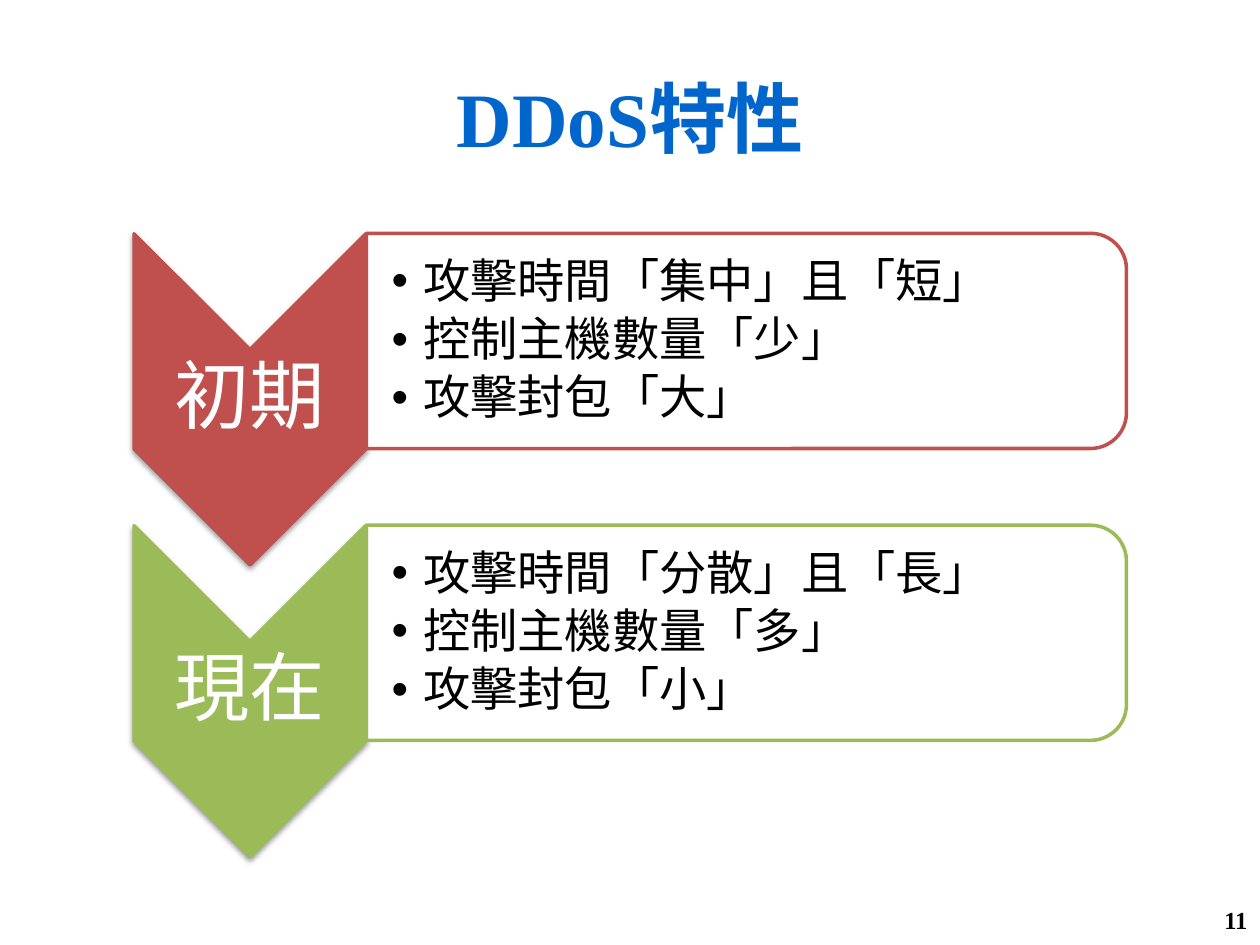
"""Builds the DDoS characteristics slide: two phases, each a chevron beside a list panel."""
from lxml import etree
from pptx import Presentation
from pptx.dml.color import RGBColor
from pptx.enum import shapes, text
from pptx.oxml import ns
from pptx.util import Pt

FONT = "Times New Roman"
BLUE = RGBColor(0x00, 0x66, 0xCC)
RED = RGBColor(0xC0, 0x50, 0x4D)
GREEN = RGBColor(0x9B, 0xBB, 0x59)
WHITE = RGBColor(0xFF, 0xFF, 0xFF)
BLACK = RGBColor(0x00, 0x00, 0x00)

PHASES = [
    ("初期", RED, ["攻擊時間「集中」且「短」", "控制主機數量「少」", "攻擊封包「大」"]),
    ("現在", GREEN, ["攻擊時間「分散」且「長」", "控制主機數量「多」", "攻擊封包「小」"]),
]
PHASE_STEP = 166.8


def add_node(parent, tag, **attributes):
    return etree.SubElement(parent, ns.qn(tag), attributes)


def format_text(box, size, color, align, margins=None, bold=False):
    frame = box.text_frame
    frame.word_wrap = True
    frame.auto_size = text.MSO_AUTO_SIZE.NONE
    frame.vertical_anchor = text.MSO_ANCHOR.MIDDLE
    if margins:
        frame.margin_left, frame.margin_top, frame.margin_right, frame.margin_bottom = map(Pt, margins)
    for para in frame.paragraphs:
        para.alignment = align
        for span in para.runs:
            span.font.name = FONT
            span.font.size = Pt(size)
            span.font.bold = bold
            span.font.color.rgb = color


deck = Presentation()
deck.slide_width, deck.slide_height = Pt(720), Pt(540)
page = deck.slides.add_slide(deck.slide_layouts[3])
title, *lists = list(page.placeholders)[:3]

title.left, title.top, title.width, title.height = Pt(36), Pt(21.6), Pt(648), Pt(90)
title.text_frame.text = "DDoS特性"
format_text(title, 44, BLUE, text.PP_ALIGN.CENTER, bold=True)

for index, (phase, color, points) in enumerate(PHASES):
    offset = index * PHASE_STEP

    chevron = page.shapes.add_shape(
        shapes.MSO_SHAPE.CHEVRON, Pt(48.2), Pt(162 + offset), Pt(189.2), Pt(132.4))
    chevron.rotation = 90
    chevron.fill.solid()
    chevron.fill.fore_color.rgb = color
    chevron.line.color.rgb = color
    chevron.line.width = Pt(2)
    chevron.shadow.inherit = False
    effects = chevron._element.spPr.find(ns.qn("a:effectLst"))
    shadow = add_node(effects, "a:outerShdw", blurRad=str(Pt(3.1)), dist=str(Pt(1.6)),
                      dir="5400000", rotWithShape="0")
    add_node(add_node(shadow, "a:srgbClr", val="000000"), "a:alpha", val="38000")

    label = page.shapes.add_textbox(Pt(76.4), Pt(199.6 + offset), Pt(132.4), Pt(56.8))
    label.text_frame.text = phase
    format_text(label, 43, WHITE, text.PP_ALIGN.CENTER, (2, 2, 2, 2))

    panel = page.shapes.add_shape(
        shapes.MSO_SHAPE.ROUND_2_SAME_RECTANGLE, Pt(365), Pt(-22.4 + offset), Pt(123), Pt(434.4))
    panel.rotation = 90
    panel.shadow.inherit = False
    panel.fill.solid()
    panel.fill.fore_color.rgb = WHITE
    tint = panel._element.spPr.find(ns.qn("a:solidFill"))[0]
    add_node(tint, "a:alpha", val="90000")
    panel.line.color.rgb = color
    panel.line.width = Pt(2)

    body = lists[index]
    body.left, body.top, body.width, body.height = Pt(208.8), Pt(139.6 + offset), Pt(428.4), Pt(111)
    body.text_frame.text = "\n".join(points)
    page.shapes._spTree.append(body._element)
    format_text(body, 27, BLACK, text.PP_ALIGN.LEFT, (15, 1.4, 1.4, 1.4))

    for box, after in ((label, "35000"), (body, "15000")):
        for para in box.text_frame.paragraphs:
            para.line_spacing = 0.9
            para.space_before = Pt(0)
            settings = para._p.get_or_add_pPr()
            add_node(add_node(settings, "a:spcAft"), "a:spcPct", val=after)
            if box is body:
                para.level = 1
                settings.set("marL", str(Pt(18)))
                settings.set("indent", str(Pt(-18)))
                add_node(settings, "a:buChar", char="•")

number = page.shapes.add_textbox(Pt(552.2), Pt(511.2), Pt(167.8), Pt(28.8))
number.text_frame.text = "11"
format_text(number, 14, BLACK, text.PP_ALIGN.RIGHT, bold=True)

deck.save("out.pptx")
